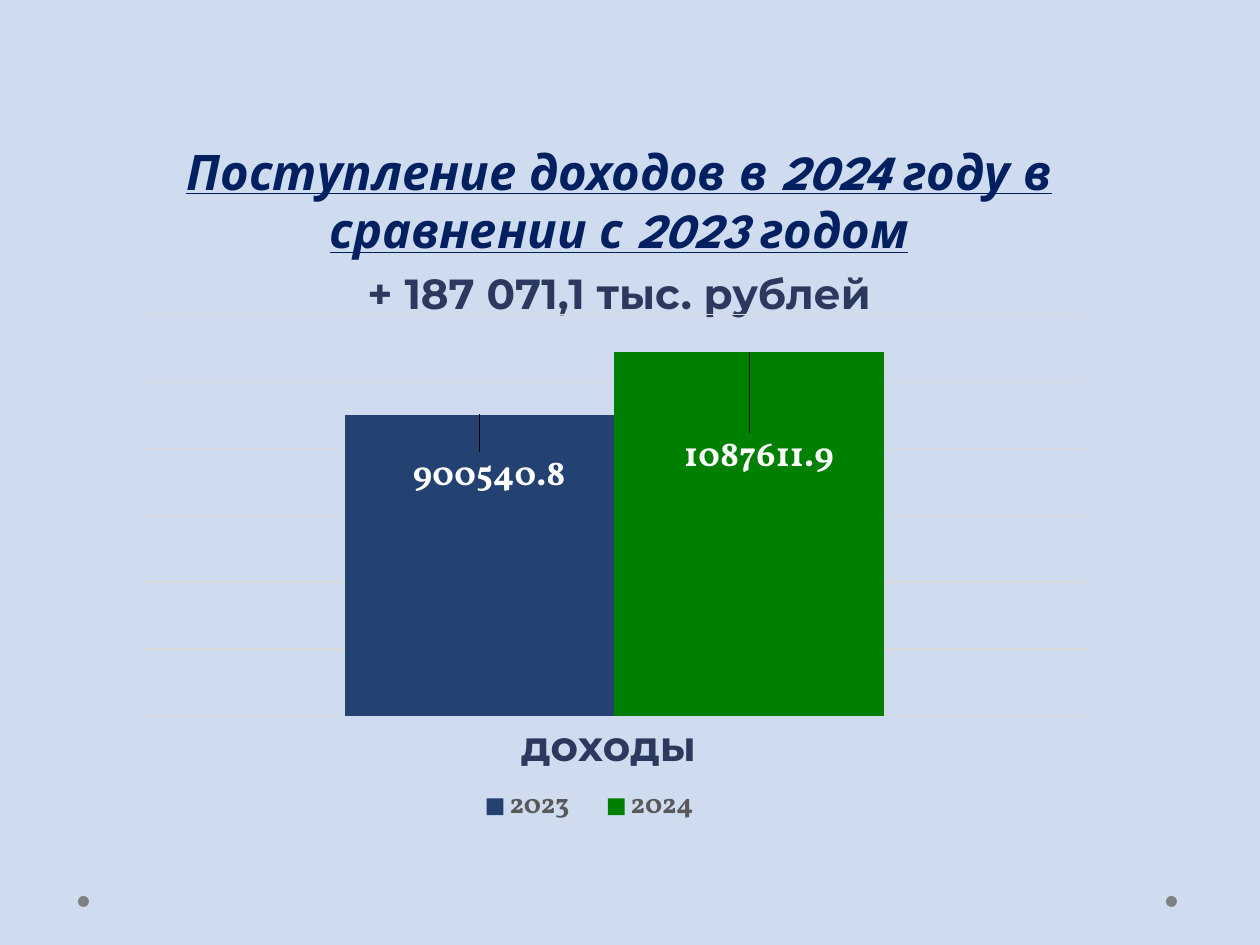
from lxml.etree import SubElement
from pptx import Presentation
from pptx.chart.data import CategoryChartData
from pptx.dml.color import RGBColor
from pptx.enum.chart import (XL_CHART_TYPE, XL_LABEL_POSITION, XL_LEGEND_POSITION,
                             XL_TICK_LABEL_POSITION, XL_TICK_MARK)
from pptx.enum.shapes import MSO_SHAPE
from pptx.enum.text import PP_ALIGN
from pptx.oxml import parse_xml
from pptx.oxml.ns import nsdecls, qn
from pptx.util import Emu, Pt

SIZE = (1260, 945)
BACKGROUND = "CFDCF0"
DOTS = [(1166, 896), (78, 896)]
DOT_SIZE, DOT_COLOR = 11, "808080"

TEXT_BOX = (44, 135, 1150, 716)
LINES = [
    ("Поступление доходов в 2024 году в сравнении с 2023 годом",
     dict(size=28, name="League Spartan", color="002060", italic=True, underline=True)),
    ("+ 187 071,1 тыс. рублей", dict(size=24, name="Montserrat", color="2C395E")),
]

CHART_BOX = (123, 304, 983, 535)
CATEGORIES = ["доходы "]
SERIES = [
    ("2023", 900540.8, "234271", (0.01, 0.06)),
    ("2024", 1087611.9, "008000", (0.01, 0.14)),
]
PLOT_LAYOUT = dict(x=0.02, y=0.02, w=0.96, h=0.75)
LEGEND_LAYOUT = dict(x=0.34, y=0.9, w=0.27, h=0.08)


def px(n):
    return Emu(round(n * 914400 / 126))


def rgb(color):
    return RGBColor.from_string(color)


def style(font, size, name, color, bold=True, italic=False, underline=False):
    font.size, font.name, font.bold = Pt(size), name, bold
    font.italic, font.underline = italic, underline
    font.color.rgb = rgb(color)


def set_layout(parent, index, modes, values):
    for old in parent.findall(qn("c:layout")):
        parent.remove(old)
    layout = parse_xml(f"<c:layout {nsdecls('c')}><c:manualLayout/></c:layout>")
    for tag, val in {**modes, **values}.items():
        SubElement(layout[0], qn(f"c:{tag}")).set("val", str(val))
    parent.insert(index, layout)


def add_dots(s):
    for x, y in DOTS:
        sp = s.shapes.add_shape(MSO_SHAPE.OVAL, px(x), px(y), px(DOT_SIZE), px(DOT_SIZE))
        sp.shadow.inherit = False
        sp.fill.solid()
        sp.fill.fore_color.rgb = rgb(DOT_COLOR)
        sp.line.fill.background()


def add_heading(s):
    tf = s.shapes.add_textbox(*map(px, TEXT_BOX)).text_frame
    tf.word_wrap = True
    for i, (text, font) in enumerate(LINES):
        p = tf.add_paragraph() if i else tf.paragraphs[0]
        p.alignment = PP_ALIGN.CENTER
        p.space_before = Pt(round(font["size"] * 0.2))
        r = p.add_run()
        r.text = text
        style(r.font, **font)


def add_income_chart(s):
    data = CategoryChartData()
    data.categories = CATEGORIES
    for name, value, *_ in SERIES:
        data.add_series(name, [value])
    chart = s.shapes.add_chart(XL_CHART_TYPE.COLUMN_CLUSTERED, *map(px, CHART_BOX), data).chart
    chart.has_title = False
    style(chart.font, 10, "Vollkorn", "000000", bold=False)

    plot = chart.plots[0]
    plot.gap_width, plot.overlap, plot.vary_by_categories = 150, 0, False
    for ser, (_, _, color, (dx, dy)) in zip(plot.series, SERIES):
        ser.format.fill.solid()
        ser.format.fill.fore_color.rgb = rgb(color)
        label = ser.points[0].data_label
        style(label.font, 20, "Vollkorn", "FFFFFF")
        label.position = XL_LABEL_POSITION.INSIDE_END
        set_layout(ser.data_labels._element.find(qn("c:dLbl")), 1, {}, dict(x=dx, y=dy))

    cat = chart.category_axis
    cat.major_tick_mark = XL_TICK_MARK.NONE
    cat.format.line.fill.background()
    style(cat.tick_labels.font, 24, "Montserrat", "2C395E")

    val = chart.value_axis
    val.minimum_scale, val.maximum_scale, val.major_unit = 0, 1200000, 200000
    val.tick_label_position = XL_TICK_LABEL_POSITION.NONE
    val.major_tick_mark = XL_TICK_MARK.NONE
    val.format.line.fill.background()
    grid = val.major_gridlines.format.line
    grid.color.rgb, grid.width = rgb("D9D9D9"), Pt(0.75)
    val.visible = False

    chart.has_legend = True
    legend = chart.legend
    legend.position, legend.include_in_layout = XL_LEGEND_POSITION.BOTTOM, False
    style(legend.font, 16, "Vollkorn", "595959")

    edges = dict(xMode="edge", yMode="edge")
    plot_area = chart._chartSpace.chart.plotArea
    set_layout(plot_area, 0, dict(layoutTarget="inner", **edges), PLOT_LAYOUT)
    set_layout(legend._element, 1, edges, LEGEND_LAYOUT)


def main():
    """Build the slide comparing income of 2024 with 2023."""
    prs = Presentation()
    prs.slide_width, prs.slide_height = map(px, SIZE)
    s = prs.slides.add_slide(prs.slide_layouts[6])
    s.background.fill.solid()
    s.background.fill.fore_color.rgb = rgb(BACKGROUND)
    add_dots(s)
    add_heading(s)
    add_income_chart(s)
    prs.save("out.pptx")


if __name__ == "__main__":
    main()
